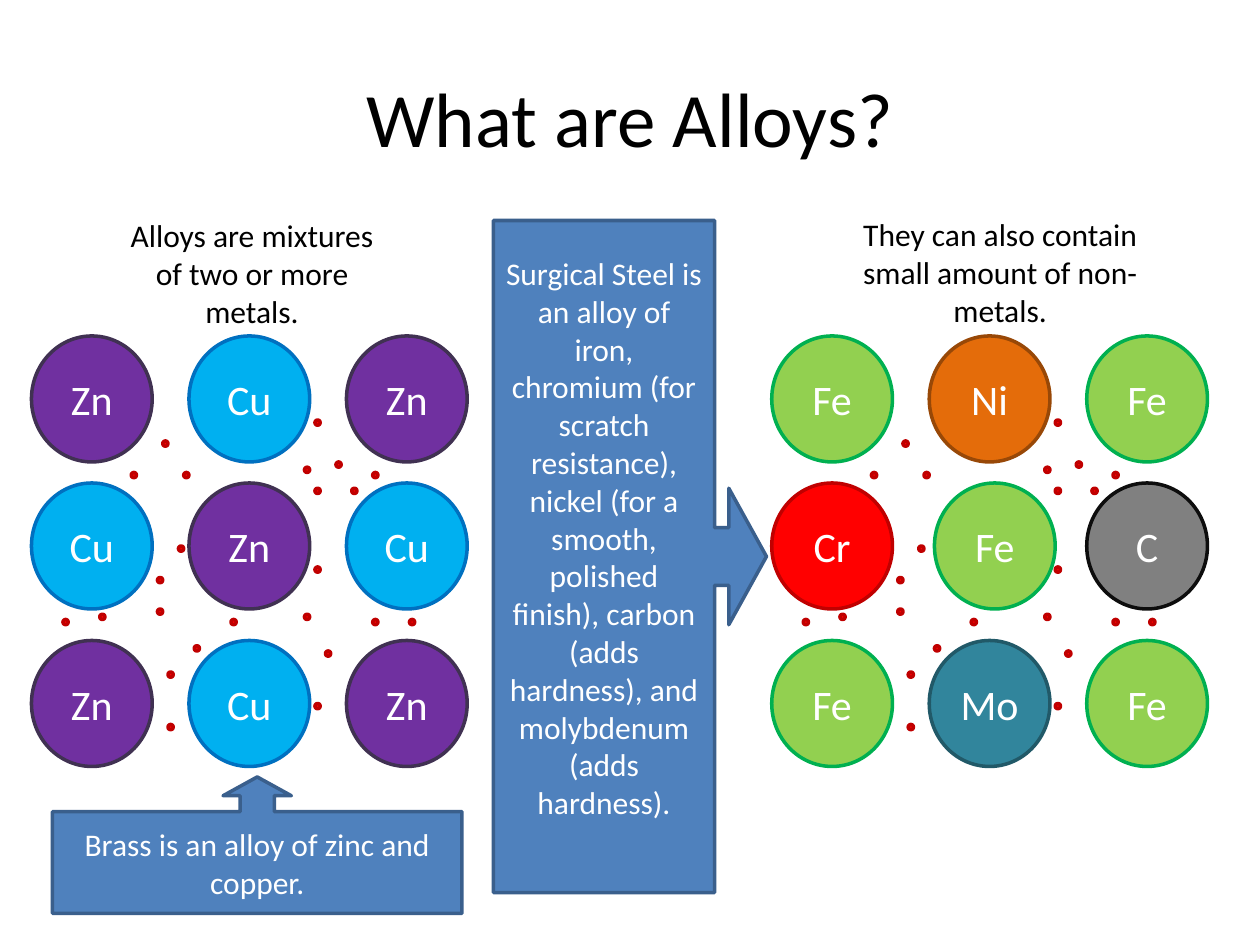
from pptx import Presentation
from pptx.dml.color import RGBColor
from pptx.enum.shapes import MSO_SHAPE
from pptx.enum.text import MSO_ANCHOR, PP_ALIGN
from pptx.util import Pt

FONT = "Calibri"
BLACK = RGBColor(0x00, 0x00, 0x00)
WHITE = RGBColor(0xFF, 0xFF, 0xFF)
RED = RGBColor(0xFF, 0x00, 0x00)
CRIMSON = RGBColor(0xC0, 0x00, 0x00)
BLUE = RGBColor(0x4F, 0x81, 0xBD)
NAVY = RGBColor(0x3A, 0x5F, 0x8C)

# Fill and line colour of each element
METALS = {
    "Zn": (RGBColor(0x70, 0x30, 0xA0), RGBColor(0x40, 0x31, 0x52)),
    "Cu": (RGBColor(0x00, 0xB0, 0xF0), RGBColor(0x00, 0x70, 0xC0)),
    "Fe": (RGBColor(0x92, 0xD0, 0x50), RGBColor(0x00, 0xB0, 0x50)),
    "Ni": (RGBColor(0xE4, 0x6C, 0x0A), RGBColor(0x98, 0x48, 0x07)),
    "Cr": (RED, CRIMSON),
    "C": (RGBColor(0x80, 0x80, 0x80), RGBColor(0x0D, 0x0D, 0x0D)),
    "Mo": (RGBColor(0x31, 0x85, 0x9C), RGBColor(0x21, 0x59, 0x68)),
}

BRASS = [["Zn", "Cu", "Zn"], ["Cu", "Zn", "Cu"], ["Zn", "Cu", "Zn"]]
STEEL = [["Fe", "Ni", "Fe"], ["Cr", "Fe", "C"], ["Fe", "Mo", "Fe"]]

# Atom and electron positions, in points from the corner of a lattice
COLS = [0, 90, 180]
ROWS = [0, 84, 174]
ATOM = (69, 72)
DOT = (3, 3)
DOTS = [
    (162, 48), (75, 60), (174, 72), (156, 75), (57, 78), (87, 78),
    (195, 78), (162, 87), (183, 87), (84, 120), (162, 132), (72, 138),
    (72, 156), (39, 159), (156, 159), (18, 162), (114, 162), (195, 162),
    (216, 162), (93, 177), (168, 180), (78, 192), (162, 210), (78, 222),
]


def write(shape, text, size, color, anchor=MSO_ANCHOR.MIDDLE):
    frame = shape.text_frame
    frame.word_wrap = True
    frame.vertical_anchor = anchor
    frame.text = text
    para = frame.paragraphs[0]
    para.alignment = PP_ALIGN.CENTER
    font = para.runs[0].font
    font.name = FONT
    font.size = Pt(size)
    font.color.rgb = color


def add_text(slide, box, text, size, anchor):
    label = slide.shapes.add_textbox(*map(Pt, box))
    write(label, text, size, BLACK, anchor)


def add_solid(slide, kind, box, fill, line):
    shape = slide.shapes.add_shape(kind, *map(Pt, box))
    shape.shadow.inherit = False
    shape.fill.solid()
    shape.fill.fore_color.rgb = fill
    shape.line.color.rgb = line
    shape.line.width = Pt(2)
    return shape


def add_lattice(slide, left, top, grid, shift=0):
    """Draw electrons and atoms; shift moves the middle atom to the right."""
    for x, y in DOTS:
        add_solid(slide, MSO_SHAPE.OVAL, (left + x, top + y, *DOT),
                  RED, CRIMSON)
    for i, row in enumerate(grid):
        for j, name in enumerate(row):
            nudge = shift if i == j == 1 else 0
            box = (left + COLS[j] + nudge, top + ROWS[i], *ATOM)
            atom = add_solid(slide, MSO_SHAPE.OVAL, box, *METALS[name])
            write(atom, name, 24, WHITE)


def add_callout(slide, kind, box, adjust, text):
    shape = add_solid(slide, kind, box, BLUE, NAVY)
    for i, value in enumerate(adjust):
        shape.adjustments[i] = value
    write(shape, text, 18, WHITE)
    return shape


def main():
    deck = Presentation()
    deck.slide_width, deck.slide_height = Pt(720), Pt(540)
    slide = deck.slides.add_slide(deck.slide_layouts[6])

    add_text(slide, (36, 21.6, 648, 90), "What are Alloys?", 44,
             MSO_ANCHOR.MIDDLE)

    add_lattice(slide, 18, 192, BRASS)
    add_text(slide, (60, 120, 168, 72.7),
             "Alloys are mixtures of two or more metals.", 18, MSO_ANCHOR.TOP)

    add_lattice(slide, 441, 192, STEEL, shift=3)
    add_text(slide, (477, 119.5, 189, 72.7),
             "They can also contain small amount of non-metals.", 18,
             MSO_ANCHOR.TOP)

    steel = add_callout(
        slide, MSO_SHAPE.RIGHT_ARROW_CALLOUT, (282, 126, 156, 384),
        (0.211, 0.25, 0.138, 0.81),
        "Surgical Steel is an alloy of iron, chromium (for scratch "
        "resistance), nickel (for a smooth, polished finish), carbon (adds "
        "hardness), and molybdenum (adds hardness).")
    steel.text_frame.margin_bottom = Pt(25.2)

    add_callout(
        slide, MSO_SHAPE.UP_ARROW_CALLOUT, (30, 444, 234, 78),
        (0.25, 0.25, 0.138, 0.746),
        "Brass is an alloy of zinc and copper.")

    deck.save("out.pptx")


if __name__ == "__main__":
    main()
